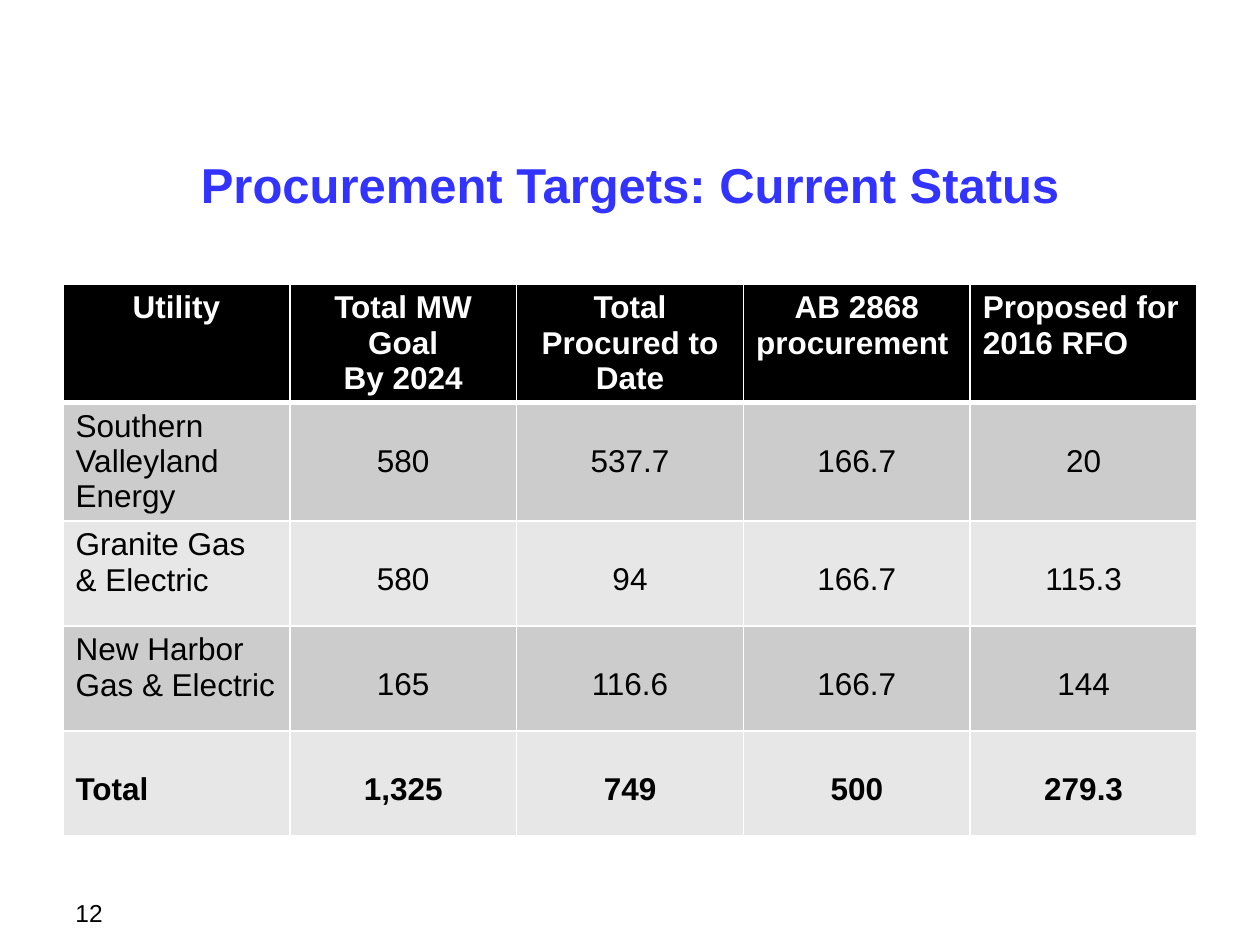
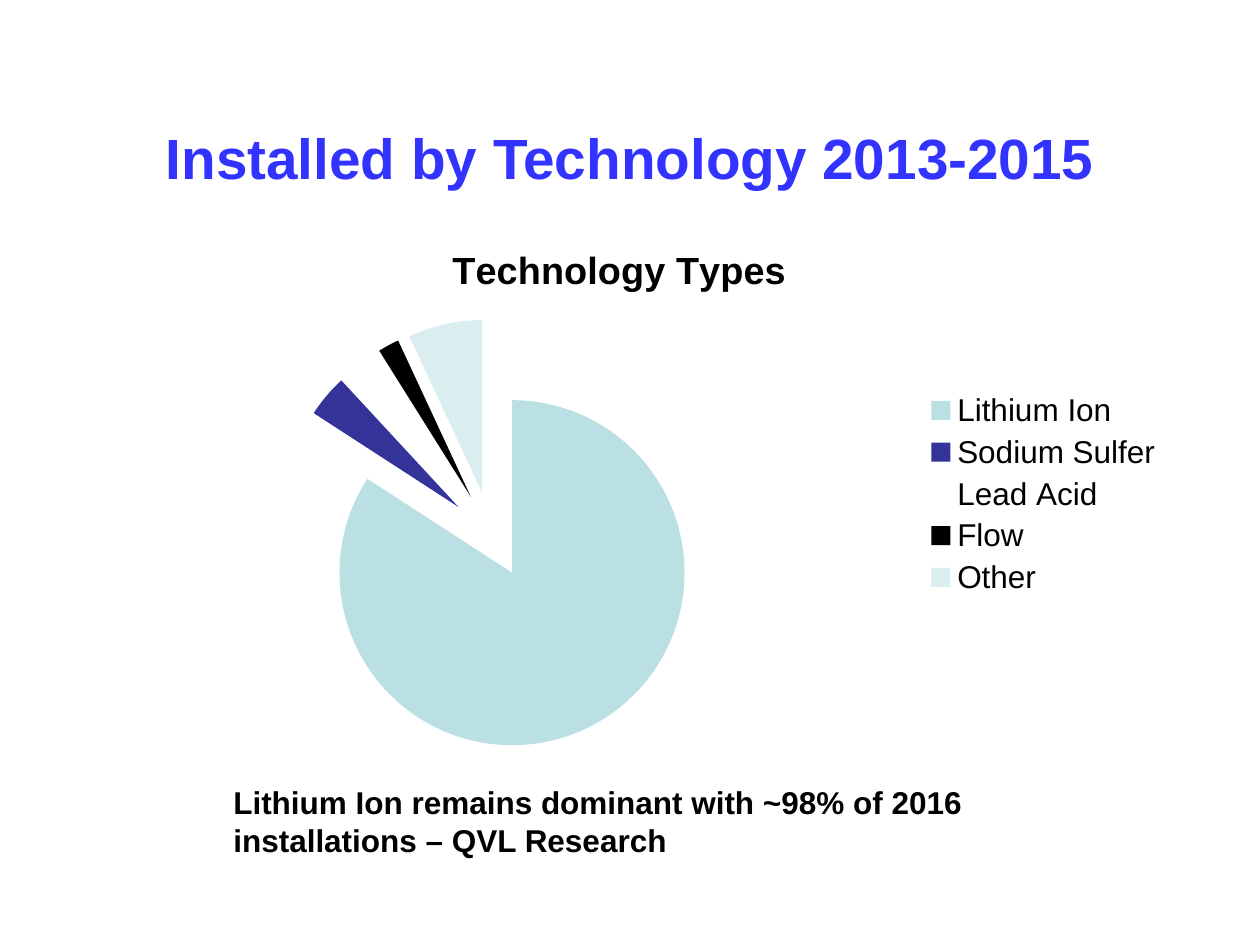
from dataclasses import dataclass
from typing import NamedTuple

from lxml.etree import SubElement
from pptx import Presentation
from pptx.chart.data import CategoryChartData
from pptx.dml.color import RGBColor
from pptx.enum.chart import XL_CHART_TYPE as ChartType, XL_LEGEND_POSITION as LegendPosition
from pptx.enum.text import MSO_ANCHOR as Anchor, PP_ALIGN as Align
from pptx.oxml import parse_xml
from pptx.oxml.ns import nsdecls, qn
from pptx.util import Pt

EMU_PER_PX = 914400 / 126


@dataclass(frozen=True)
class Theme:
    font: str = "Arial"
    title: str = "3333FF"
    ink: str = "000000"
    paper: str = "FFFFFF"
    bands: tuple = ("CCCCCC", "E7E7E7")
    slices: tuple = ("BBE0E3", "333399", "FFFFFF", "000000", "DAEDEF")
    body_size: float = 18
    chart_title_size: float = 21.6
    number_size: float = 14


class Box(NamedTuple):
    left: int
    top: int
    width: int
    height: int


THEME = Theme()
TITLE_BOX = Box(63, 116, 1134, 136)
TABLE_BOX = Box(63, 284, 1134, 567)
NUMBER_BOX = Box(63, 861, 231, 66)
CHART_BOX = Box(63, 221, 1113, 546)
CAPTION_BOX = Box(221, 777, 908, 89)

HEADERS = ["Utility", "Total MW Goal\nBy 2024", "Total Procured to Date",
           "AB 2868\nprocurement ", "Proposed for 2016 RFO"]
ROWS = [
    ["Southern Valleyland Energy", "580", "537.7", "166.7", "20"],
    ["Granite Gas\n& Electric", "580", "94", "166.7", "115.3"],
    ["New Harbor Gas & Electric", "165", "116.6", "166.7", "144"],
    ["Total", "1,325", "749", "500", "279.3"],
]
ROW_HEIGHTS = [118, 118, 105, 105, 105]
LINE_DROP = 41  # top inset that puts figures on the second line of a row

TECHNOLOGY_SHARES = {"Lithium Ion": 85, "Sodium Sulfer": 4, "Lead Acid": 3,
                     "Flow": 2, "Other": 7}


def px(length):
    return round(length * EMU_PER_PX)


def emu_box(box):
    return [px(length) for length in box]


def style_font(font, size, color, bold=False):
    font.name = THEME.font
    font.size = Pt(size)
    font.bold = bold
    font.color.rgb = RGBColor.from_string(color)


def write(frame, text, size, color=THEME.ink, bold=False, align=Align.LEFT):
    """Fill a text frame, one paragraph a line, in one style."""
    frame.text = text
    for para in frame.paragraphs:
        para.alignment = align
        style_font(para.font, size, color, bold)


def add_page(deck, title, size, lift=0):
    """Add a slide with its title, raised by lift px inside the title box."""
    page = deck.slides.add_slide(deck.slide_layouts.get_by_name("Title Only"))
    holder = page.shapes.title
    holder.left, holder.top, holder.width, holder.height = emu_box(TITLE_BOX)
    frame = holder.text_frame
    frame.vertical_anchor = Anchor.MIDDLE
    frame.margin_bottom = px(6 + 2 * lift)
    write(frame, title, size, THEME.title, True, Align.CENTER)
    return page


def add_text(page, box, text, size, bold=False, top_inset=6):
    frame = page.shapes.add_textbox(*emu_box(box)).text_frame
    frame.word_wrap = True
    frame.margin_top = px(top_inset)
    write(frame, text, size, bold=bold)


def set_borders(cell, bottom_width):
    properties = cell._tc.get_or_add_tcPr()
    widths = {"lnL": 1, "lnR": 1, "lnT": 1, "lnB": bottom_width}
    for index, (side, width) in enumerate(widths.items()):
        properties.insert(index, parse_xml(
            f'<a:{side} {nsdecls("a")} w="{Pt(width)}"><a:solidFill>'
            f'<a:srgbClr val="{THEME.paper}"/></a:solidFill></a:{side}>'))


def fill_cell(cell, text, fill, color, bold, align):
    cell.fill.solid()
    cell.fill.fore_color.rgb = RGBColor.from_string(fill)
    write(cell.text_frame, text, THEME.body_size, color, bold, align)


def add_targets_table(page, box):
    table = page.shapes.add_table(len(ROWS) + 1, len(HEADERS), *emu_box(box)).table
    for column in table.columns:
        column.width = px(box.width / len(HEADERS))
    for row, height in zip(table.rows, ROW_HEIGHTS):
        row.height = px(height)

    for column, text in enumerate(HEADERS):
        cell = table.cell(0, column)
        align = Align.LEFT if column == len(HEADERS) - 1 else Align.CENTER
        fill_cell(cell, text, THEME.ink, THEME.paper, True, align)
        set_borders(cell, 3)

    for number, values in enumerate(ROWS, 1):
        is_total = number == len(ROWS)
        for column, text in enumerate(values):
            cell = table.cell(number, column)
            align = Align.CENTER if column else Align.LEFT
            fill_cell(cell, text, THEME.bands[(number - 1) % 2], THEME.ink, is_total, align)
            set_borders(cell, 1)
            if column or is_total:
                cell.margin_top = px(LINE_DROP)


def place_plot(chart, **fractions):
    """Fix the plot area at fractions of the chart's size."""
    plot_area = chart._chartSpace.chart.plotArea
    for old in plot_area.findall(qn("c:layout")):
        plot_area.remove(old)
    layout = parse_xml(f'<c:layout {nsdecls("c")}><c:manualLayout/></c:layout>')
    settings = {"layoutTarget": "inner", "xMode": "edge", "yMode": "edge", **fractions}
    for name, value in settings.items():
        SubElement(layout[0], qn(f"c:{name}")).set("val", str(value))
    plot_area.insert(0, layout)


def add_technology_pie(page, box):
    data = CategoryChartData()
    data.categories = list(TECHNOLOGY_SHARES)
    data.add_series("Technology Types", list(TECHNOLOGY_SHARES.values()))
    chart = page.shapes.add_chart(ChartType.PIE_EXPLODED, *emu_box(box), data).chart
    style_font(chart.font, THEME.body_size, THEME.ink)

    chart.has_title = True
    write(chart.chart_title.text_frame, "Technology Types", THEME.chart_title_size,
          bold=True, align=Align.CENTER)
    chart.has_legend = True
    chart.legend.position = LegendPosition.RIGHT
    chart.legend.include_in_layout = False
    style_font(chart.legend.font, THEME.body_size, THEME.ink)

    plot = chart.plots[0]
    plot.vary_by_categories = True
    series = plot.series[0]
    series._element.find(qn("c:explosion")).set("val", "25")
    for index, color in enumerate(THEME.slices):
        slice_format = series.points[index].format
        slice_format.fill.solid()
        slice_format.fill.fore_color.rgb = RGBColor.from_string(color)
        slice_format.line.fill.background()
    place_plot(chart, x=0.19, y=0.18, w=0.39, h=0.79)


def add_targets_page(deck):
    page = add_page(deck, "Procurement Targets: Current Status", 28)
    add_targets_table(page, TABLE_BOX)
    add_text(page, NUMBER_BOX, "12", THEME.number_size, top_inset=37)


def add_technology_page(deck):
    page = add_page(deck, "Installed by Technology 2013-2015", 32.4, lift=27)
    add_technology_pie(page, CHART_BOX)
    add_text(page, CAPTION_BOX, "Lithium Ion remains dominant with ~98% of 2016 "
             "installations – QVL Research", THEME.body_size, bold=True)


def main():
    deck = Presentation()
    deck.slide_width, deck.slide_height = px(1260), px(945)
    add_targets_page(deck)
    add_technology_page(deck)
    deck.save("out.pptx")


if __name__ == "__main__":
    main()
